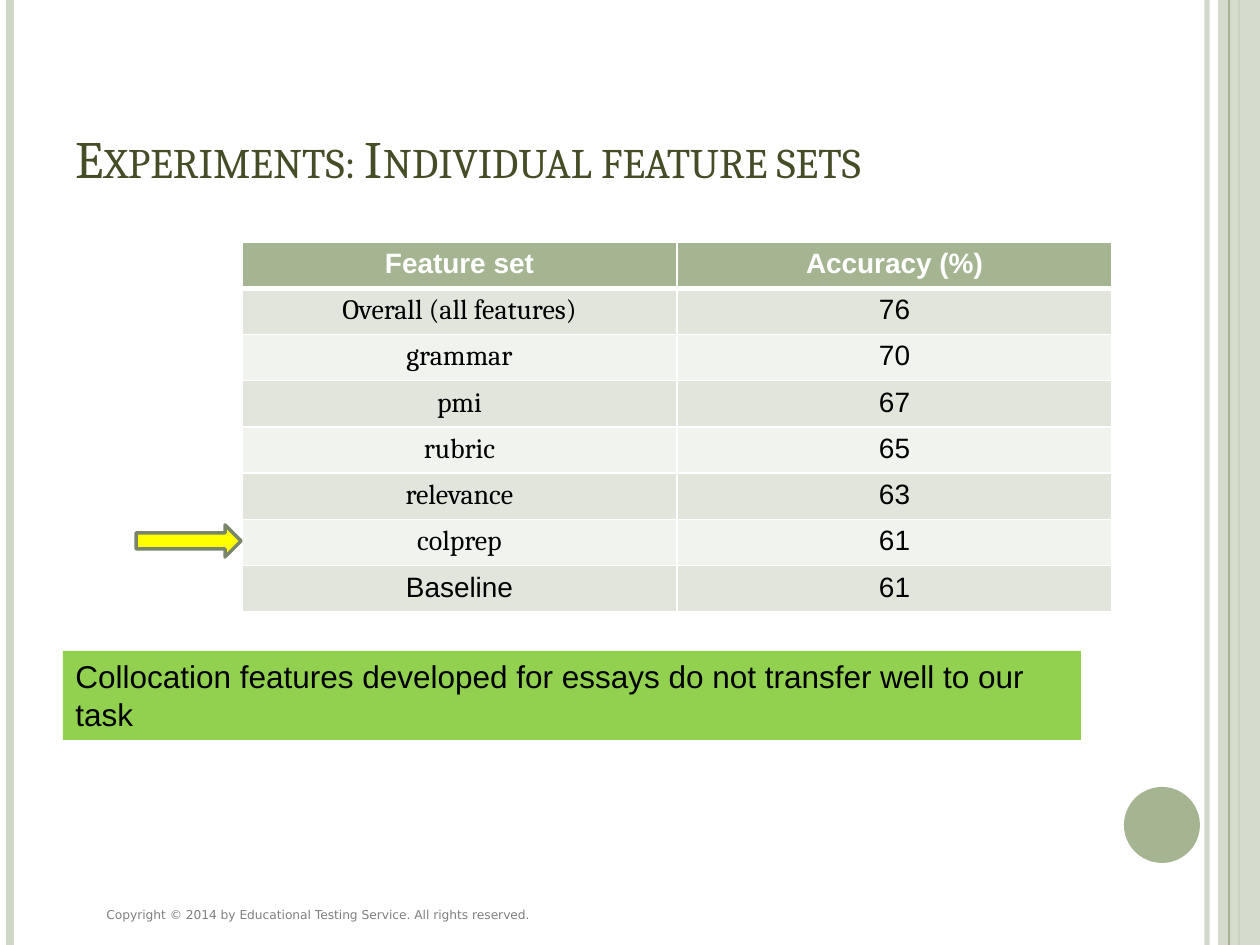
from lxml import etree
from pptx import Presentation
from pptx.dml.color import RGBColor
from pptx.enum.shapes import MSO_CONNECTOR, MSO_SHAPE
from pptx.enum.text import MSO_ANCHOR, MSO_AUTO_SIZE, PP_ALIGN
from pptx.oxml import parse_xml
from pptx.oxml.ns import nsdecls, qn
from pptx.util import Emu, Pt

STRAIGHT = MSO_CONNECTOR.STRAIGHT
RECTANGLE, ELLIPSE, RIGHT_ARROW = MSO_SHAPE.RECTANGLE, MSO_SHAPE.OVAL, MSO_SHAPE.RIGHT_ARROW
LEFT, CENTER = PP_ALIGN.LEFT, PP_ALIGN.CENTER
TOP, BOTTOM = MSO_ANCHOR.TOP, MSO_ANCHOR.BOTTOM
NO_FIT, GROW = MSO_AUTO_SIZE.NONE, MSO_AUTO_SIZE.SHAPE_TO_FIT_TEXT
PX_PER_INCH = 126

THEME = {
    "colors": {
        "sage": "A5B592", "pale": "CFD7C7", "title": "444D26", "grey": "808080",
        "band_dark": "E1E5DC", "band_light": "F0F3EE", "white": "FFFFFF", "black": "000000",
        "callout": "92D050", "arrow": "FFFF00", "arrow_edge": "7A866C",
    },
    "sizes": {"title": 30, "callout": 18, "table": 16, "footer": 7},
    "fonts": {"serif": "Cambria", "sans": "Arial", "footer": "DejaVu Sans"},
}
SIZES, FONTS = THEME["sizes"], THEME["fonts"]
COLORS = {name: RGBColor.from_string(value) for name, value in THEME["colors"].items()}


def px(length):
    return Emu(round(length * 914400 / PX_PER_INCH))


def write_text(frame, text, size, font, color, align=LEFT, anchor=TOP, bold=False, small_caps=False):
    frame.word_wrap = True
    frame.vertical_anchor = anchor
    para = frame.paragraphs[0]
    para.alignment = align
    span = para.add_run()
    span.text = text
    span.font.size = Pt(SIZES[size])
    span.font.name = FONTS[font]
    span.font.bold = bold
    span.font.color.rgb = COLORS[color]
    if small_caps:
        span._r.get_or_add_rPr().set("cap", "small")


deck = Presentation()
deck.slide_width, deck.slide_height = px(1260), px(945)
page = deck.slides.add_slide(deck.slide_layouts[5])
shapes = page.shapes

# Vertical rules and side band: x, colour, width in points, opacity in percent
rules = [(1207, "pale", 3, 93), (10, "pale", 4.5, 100), (1239, "sage", 1.5, 100),
         (1229, "sage", 0.75, 100)]
for x, color, width, opacity in rules:
    rule = shapes.add_connector(STRAIGHT, px(x), px(0), px(x), px(945))
    rule.line.color.rgb = COLORS[color]
    rule.line.width = Pt(width)
    properties = rule._element.spPr
    etree.SubElement(properties, qn("a:effectLst"))
    if opacity < 100:
        tint = properties.find(".//" + qn("a:srgbClr"))
        etree.SubElement(tint, qn("a:alpha")).set("val", str(opacity * 1000))
    if x == 1239:
        # The side band lies over this rule and under the last one
        band = shapes.add_shape(RECTANGLE, px(1218), px(0), px(42), px(945))
        band.shadow.inherit = False
        band.fill.solid()
        band.fill.fore_color.rgb = COLORS["pale"]
        band.line.fill.background()
        tint = band._element.spPr.find(".//" + qn("a:srgbClr"))
        etree.SubElement(tint, qn("a:alpha")).set("val", "87000")

# Corner disc, callout bar and pointer arrow
blocks = {}
for name, kind, left, top, width, height, fill, edge in [
    ("disc", ELLIPSE, 1124, 787, 76, 76, "sage", None),
    ("callout", RECTANGLE, 63, 651, 1018, 89, "callout", None),
    ("arrow", RIGHT_ARROW, 136, 525, 105, 32, "arrow", "arrow_edge"),
]:
    block = shapes.add_shape(kind, px(left), px(top), px(width), px(height))
    block.shadow.inherit = False
    block.fill.solid()
    block.fill.fore_color.rgb = COLORS[fill]
    if edge:
        block.line.color.rgb = COLORS[edge]
        block.line.width = Pt(2)
    else:
        block.line.fill.background()
    blocks[name] = block

write_text(blocks["callout"].text_frame,
           "Collocation features developed for essays do not transfer well to our task",
           "callout", "sans", "black")
blocks["callout"].text_frame.auto_size = GROW

# Copyright line
footer = shapes.add_textbox(px(94), px(901), px(788), px(28))
write_text(footer.text_frame, "Copyright © 2014 by Educational Testing Service. All rights reserved.",
           "footer", "footer", "grey")
footer.text_frame.auto_size = GROW

# Title
title = shapes.title
title.left, title.top, title.width, title.height = px(63), px(38), px(1092), px(157)
write_text(title.text_frame, "Experiments: Individual feature sets", "title", "serif", "title",
           anchor=BOTTOM, small_caps=True)
title.text_frame.auto_size = NO_FIT

# Accuracy table
rows = [("Feature set", "Accuracy (%)"), ("Overall (all features)", "76"), ("grammar", "70"),
        ("pmi", "67"), ("rubric", "65"), ("relevance", "63"), ("colprep", "61"), ("Baseline", "61")]
row_height = 38
table = shapes.add_table(len(rows), 2, px(242), px(242), px(870), px(row_height * len(rows))).table
for row_index, row in enumerate(rows):
    header = row_index == 0
    if header:
        fill = "sage"
    else:
        fill = "band_dark" if row_index % 2 else "band_light"
    for column_index, text in enumerate(row):
        cell = table.cell(row_index, column_index)
        cell.fill.solid()
        cell.fill.fore_color.rgb = COLORS[fill]
        serif = column_index == 0 and not header and text != "Baseline"
        write_text(cell.text_frame, text, "table", "serif" if serif else "sans",
                   "white" if header else "black", align=CENTER, bold=header)
        # White borders, thicker between the header and the body
        widths = {"lnL": 1, "lnR": 1, "lnT": 3 if row_index == 1 else 1, "lnB": 3 if header else 1}
        for position, (side, width) in enumerate(widths.items()):
            border = parse_xml(
                f'<a:{side} {nsdecls("a")} w="{Pt(width)}"><a:solidFill>'
                f'<a:srgbClr val="{COLORS["white"]}"/></a:solidFill></a:{side}>')
            cell._tc.get_or_add_tcPr().insert(position, border)

# The arrow tip lies over the table edge
shapes._spTree.append(blocks["arrow"]._element)

deck.save("out.pptx")
